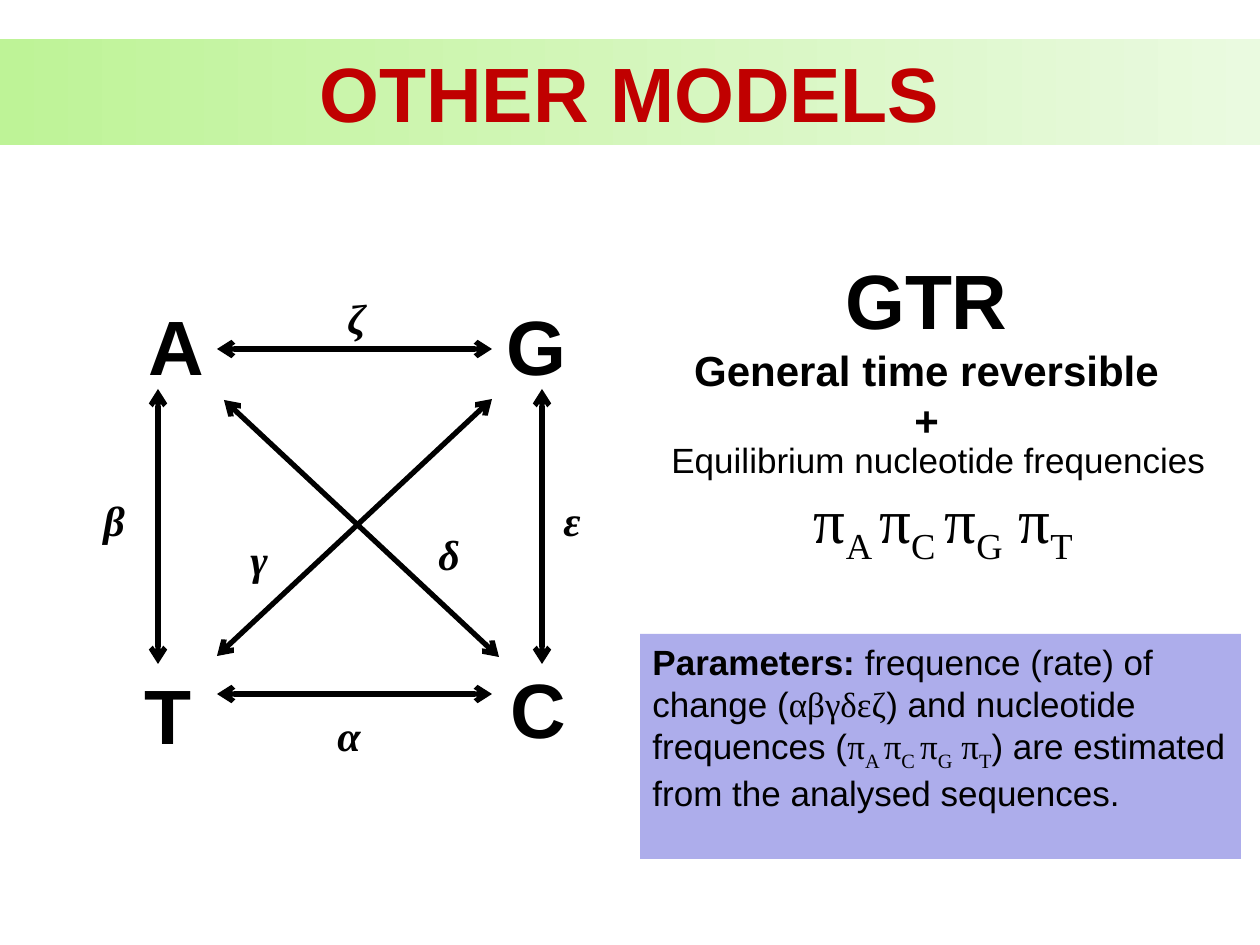
"""Builds the slide on the GTR nucleotide substitution model."""
from lxml import etree
from pptx import Presentation
from pptx import util as u
from pptx.dml.color import RGBColor
from pptx.enum import shapes, text
from pptx.oxml.ns import qn

SCALE = 914400 / 126
SANS, SERIF = "Arial", "Times New Roman"
COLORS = {"black": "000000", "title": "C00000", "band_left": "BEF397",
          "band_right": "EAFAE0", "panel": "ADADEB"}


def px(*lengths):
    return [u.Emu(round(length * SCALE)) for length in lengths]


def add_runs(paragraph, pieces, size, color="black"):
    """Each piece is (words, font name, bold, italic, subscript)."""
    for words, name, bold, italic, subscript in pieces:
        run = paragraph.add_run()
        run.text = words
        run.font.name, run.font.size = name, u.Pt(size)
        run.font.bold, run.font.italic = bold, italic
        run.font.color.rgb = RGBColor.from_string(COLORS[color])
        if subscript:
            run.font._element.set("baseline", "-25000")


presentation = Presentation()
presentation.slide_width, presentation.slide_height = px(1260, 945)
slide = presentation.slides.add_slide(presentation.slide_layouts[6])

nucleotides = [("A", 136, 292), ("G", 494, 292), ("C", 498, 655), ("T", 132, 661)]
for letter, left, top in nucleotides:
    box = slide.shapes.add_textbox(*px(left, top, 88, 106))
    box.text_frame.word_wrap = True
    add_runs(box.text_frame.paragraphs[0], [(letter, SANS, True, False, False)], 44)

arrows = [(217, 349, 492, 349), (217, 694, 492, 694), (158, 389, 158, 664),
          (542, 389, 542, 664), (224, 400, 499, 657), (492, 399, 217, 656)]
for ends in arrows:
    arrow = slide.shapes.add_connector(shapes.MSO_CONNECTOR.STRAIGHT, *px(*ends))
    arrow.line.width = u.Pt(3)
    arrow.line.color.rgb = RGBColor.from_string(COLORS["black"])
    line = arrow.line._get_or_add_ln()
    for end in ("a:headEnd", "a:tailEnd"):
        etree.SubElement(line, qn(end), type="arrow")
    etree.SubElement(arrow._element.spPr, qn("a:effectLst"))

rates = [("α", 325, 703, 49), ("ε", 551, 488, 43), ("β", 91, 488, 47),
         ("δ", 426, 522, 47), ("γ", 238, 527, 43), ("ζ", 335, 286, 44)]
for letter, left, top, width in rates:
    box = slide.shapes.add_textbox(*px(left, top, width, 63))
    box.text_frame.word_wrap = False
    add_runs(box.text_frame.paragraphs[0], [(letter, SERIF, True, True, False)], 24)

model = slide.shapes.add_textbox(*px(679, 246, 495, 208))
model.text_frame.word_wrap = False
model.text_frame.text = "GTR\nGeneral time reversible\n+"
for paragraph, size in zip(model.text_frame.paragraphs, (44, 24, 24)):
    paragraph.alignment = text.PP_ALIGN.CENTER
    font = paragraph.runs[0].font
    font.name, font.size, font.bold = SANS, u.Pt(size), True
    font.color.rgb = RGBColor.from_string(COLORS["black"])

band = slide.shapes.add_shape(shapes.MSO_SHAPE.RECTANGLE, *px(0, 39, 1260, 106))
band.shadow.inherit = False
band.line.fill.background()
band.fill.gradient()
band.fill.gradient_angle = 0
for stop, color in zip(band.fill.gradient_stops, ("band_left", "band_right")):
    stop.color.rgb = RGBColor.from_string(COLORS[color])
title = band.text_frame.paragraphs[0]
title.alignment = text.PP_ALIGN.CENTER
add_runs(title, [("OTHER MODELS", SANS, True, False, False)], 44, "title")

frequencies = []
for symbol, base in [("π", "A "), ("π", "C "), ("π", "G"), (" π", "T")]:
    frequencies += [(symbol, SERIF, False, False, False), (base, SERIF, False, False, True)]

equilibrium = slide.shapes.add_textbox(*px(659, 432, 564, 131))
equilibrium.text_frame.word_wrap = False
heading = equilibrium.text_frame.paragraphs[0]
add_runs(heading, [("Equilibrium nucleotide frequencies", SANS, False, False, False)], 20)
symbols = equilibrium.text_frame.add_paragraph()
symbols.alignment = text.PP_ALIGN.CENTER
add_runs(symbols, [(" ", SANS, False, False, False)], 20)
add_runs(symbols, frequencies, 36)

panel = slide.shapes.add_shape(shapes.MSO_SHAPE.RECTANGLE, *px(640, 634, 601, 225))
panel.shadow.inherit = False
panel.line.fill.background()
panel.fill.solid()
panel.fill.fore_color.rgb = RGBColor.from_string(COLORS["panel"])
panel.text_frame.word_wrap = True
panel.text_frame.vertical_anchor = text.MSO_ANCHOR.TOP
parameters = panel.text_frame.paragraphs[0]
parameters.alignment = text.PP_ALIGN.LEFT
add_runs(parameters, [
    ("Parameters:", SANS, True, False, False),
    (" frequence (rate) of change (", SANS, False, False, False),
    ("αβγδεζ", SERIF, False, False, False),
    (") and nucleotide frequences (", SANS, False, False, False),
    *frequencies,
    (") are estimated from the analysed sequences.", SANS, False, False, False),
], 20)

presentation.save("out.pptx")
